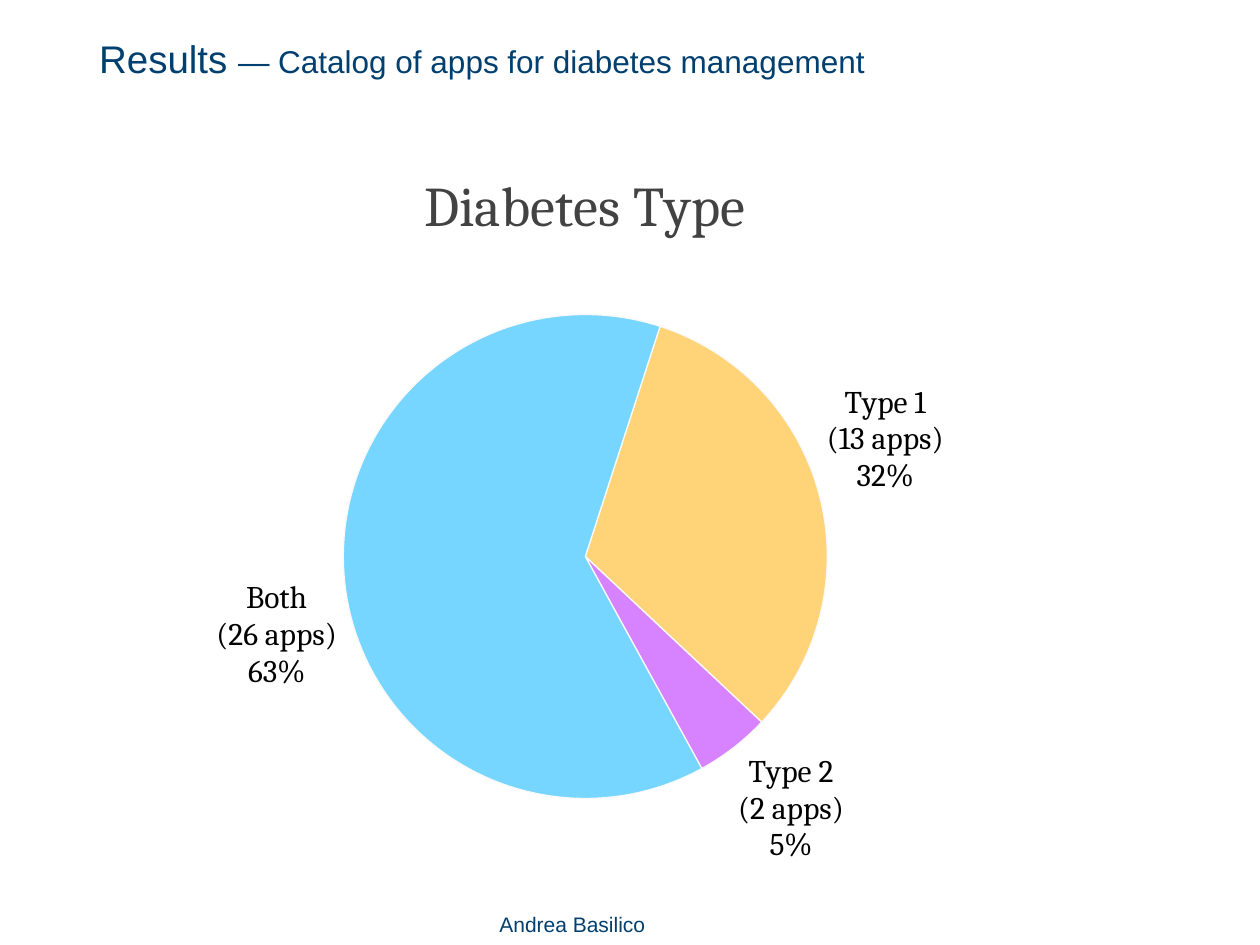
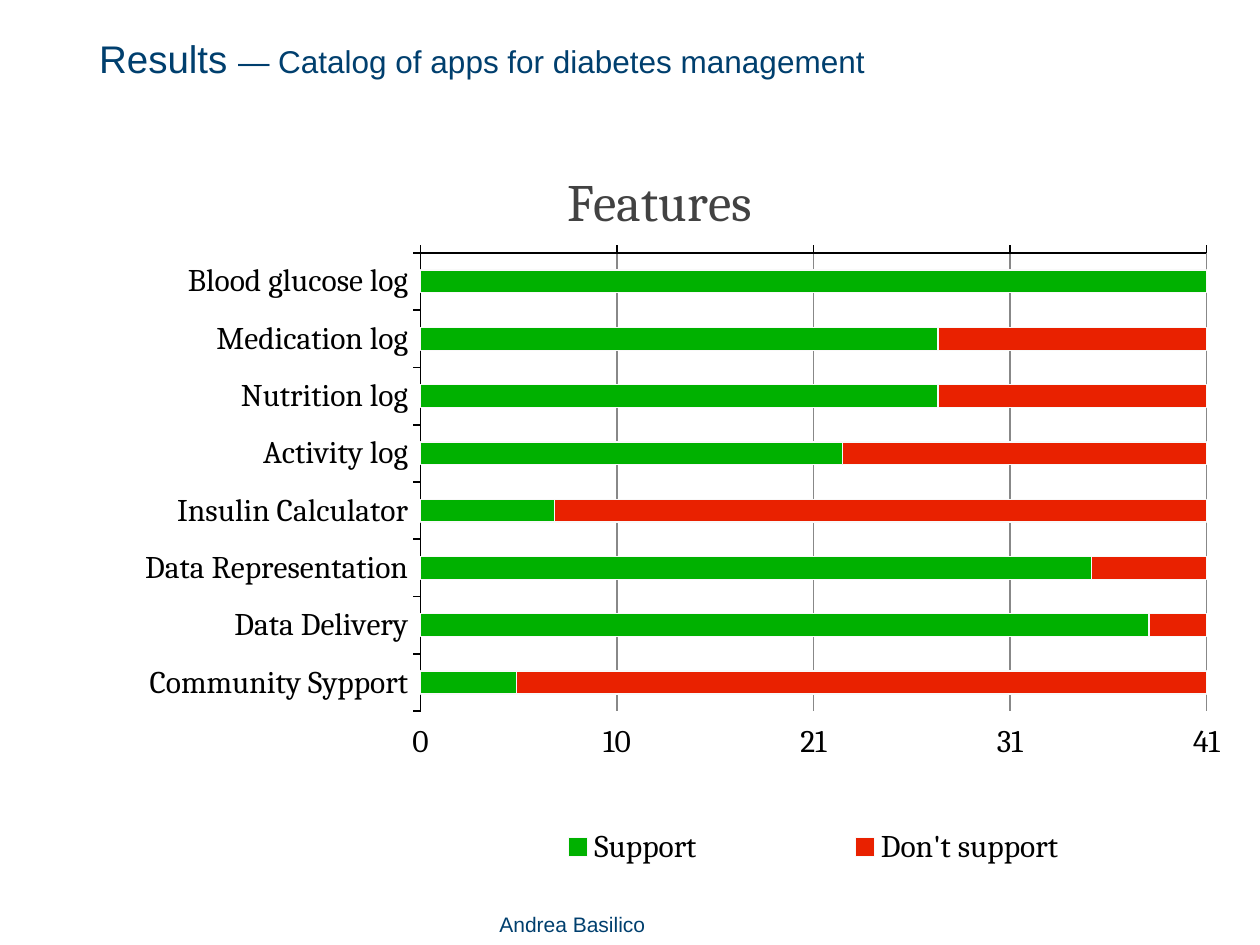
from lxml import etree
from pptx import Presentation
from pptx.chart.data import CategoryChartData
from pptx.dml.color import RGBColor
from pptx.enum.chart import (XL_CHART_TYPE, XL_LABEL_POSITION, XL_LEGEND_POSITION,
                             XL_TICK_LABEL_POSITION, XL_TICK_MARK)
from pptx.enum.text import MSO_ANCHOR, MSO_AUTO_SIZE, PP_ALIGN
from pptx.oxml.ns import qn
from pptx.util import Cm, Pt

PIE, BAR_STACKED = XL_CHART_TYPE.PIE, XL_CHART_TYPE.BAR_STACKED
OUTSIDE_END = XL_LABEL_POSITION.OUTSIDE_END
BOTTOM = XL_LEGEND_POSITION.BOTTOM
LABELS_HIGH = XL_TICK_LABEL_POSITION.HIGH
TICK_OUT, TICK_NONE = XL_TICK_MARK.OUTSIDE, XL_TICK_MARK.NONE
TITLE_ONLY = 5

COLORS = {
    "navy": "003F6E", "heading": "424242", "black": "000000",
    "edge": "F9F9F9", "grid": "888888",
    "type1": "FFD479", "type2": "D783FF", "both": "76D6FF",
    "support": "00B100", "no_support": "E92100",
}
SANS, SERIF = "Arial", "Cambria"

DIABETES_TYPES = [
    ("Type 1", "(13 apps)", 32, "type1"),
    ("Type 2", "(2 apps)", 5, "type2"),
    ("Both", "(26 apps)", 63, "both"),
]
APP_COUNT = 41
FEATURE_SUPPORT = {
    "Blood glucose log": 41, "Medication log": 27, "Nutrition log": 27,
    "Activity log": 22, "Insulin Calculator": 7, "Data Representation": 35,
    "Data Delivery": 38, "Community Sypport": 5,
}


def rgb(name):
    return RGBColor.from_string(COLORS[name])


def set_font(font, size, color="black", name=SERIF):
    font.size, font.name, font.bold = Pt(size), name, False
    font.color.rgb = rgb(color)


def set_line(line, color, width):
    line.color.rgb = rgb(color)
    line.width = Pt(width)


def set_layout(parent, index, box, inner=False):
    """Place a chart part by fractions (x, y, w, h) of the chart area."""
    for old in parent.findall(qn("c:layout")):
        parent.remove(old)
    layout = etree.Element(qn("c:layout"))
    parent.insert(index, layout)
    manual = etree.SubElement(layout, qn("c:manualLayout"))
    settings = [("layoutTarget", "inner")] if inner else []
    settings += [("xMode", "edge"), ("yMode", "edge"), *zip("xywh", box)]
    for tag, value in settings:
        etree.SubElement(manual, qn(f"c:{tag}")).set("val", str(value))


class Deck:
    """Shared style and the slide being filled."""

    def __init__(self):
        self.prs = Presentation()
        self.prs.slide_width, self.prs.slide_height = Cm(25.4), Cm(19.05)
        self.s = None

    def slide(self, subtitle):
        self.s = self.prs.slides.add_slide(self.prs.slide_layouts[TITLE_ONLY])
        self.title(subtitle)
        self.footer("Andrea Basilico")

    def text(self, sp, box, runs, align, inset):
        sp.left, sp.top, sp.width, sp.height = map(Cm, box)
        tf = sp.text_frame
        tf.word_wrap, tf.auto_size = True, MSO_AUTO_SIZE.NONE
        tf.vertical_anchor = MSO_ANCHOR.TOP
        tf.margin_left = tf.margin_right = tf.margin_top = tf.margin_bottom = Cm(inset)
        p = tf.paragraphs[0]
        p.alignment = align
        for text, size in runs:
            r = p.add_run()
            r.text = text
            set_font(r.font, size, "navy", SANS)

    def title(self, subtitle):
        self.text(self.s.shapes.title, (2, 0.71, 20.7, 2.34),
                  [("Results ", 22), (f"— {subtitle}", 18)], PP_ALIGN.LEFT, 0)

    def footer(self, author):
        box = (0.64, 18.24, 12.5, 0.74)
        sp = self.s.shapes.add_textbox(*map(Cm, box))
        self.text(sp, box, [(author, 12)], PP_ALIGN.RIGHT, 0.13)

    def chart(self, kind, box, title, title_size, categories, series, plot_box):
        data = CategoryChartData()
        data.categories = categories
        for name, values in series:
            data.add_series(name, values)
        chart = self.s.shapes.add_chart(kind, *map(Cm, box), data).chart
        set_font(chart.font, 10, name=SANS)
        chart.has_title, chart.has_legend = True, False
        r = chart.chart_title.text_frame.paragraphs[0].add_run()
        r.text = title
        set_font(r.font, title_size, "heading")
        chart.plots[0].vary_by_categories = False
        set_layout(chart._chartSpace.chart.plotArea, 0, plot_box, inner=True)
        return chart

    def pie(self, box, title, slices, start_angle, plot_box):
        chart = self.chart(PIE, box, title, 32,
                           [f"{name} {count}" for name, count, _, _ in slices],
                           [(title, [share for _, _, share, _ in slices])], plot_box)
        plot = chart.plots[0]
        angle = etree.SubElement(plot._element, qn("c:firstSliceAng"))
        angle.set("val", str(start_angle))
        for i, (name, count, share, color) in enumerate(slices):
            point = plot.series[0].points[i]
            point.format.fill.solid()
            point.format.fill.fore_color.rgb = rgb(color)
            set_line(point.format.line, "edge", 0.75)
            label = point.data_label
            tf = label.text_frame
            for n, text in enumerate((name, count, f"{share}%")):
                p = tf.add_paragraph() if n else tf.paragraphs[0]
                r = p.add_run()
                r.text = text
                set_font(r.font, 18)
            label.position = OUTSIDE_END

    def stacked_bars(self, box, title, categories, series, colors, maximum, plot_box):
        chart = self.chart(BAR_STACKED, box, title, 30, categories, series, plot_box)
        plot = chart.plots[0]
        plot.gap_width, plot.overlap = 150, 100
        for ser, color in zip(plot.series, colors):
            ser.invert_if_negative = False
            ser.format.fill.solid()
            ser.format.fill.fore_color.rgb = rgb(color)
            set_line(ser.format.line, "edge", 0.75)
        for axis in (chart.category_axis, chart.value_axis):
            axis.major_tick_mark, axis.minor_tick_mark = TICK_OUT, TICK_NONE
            set_font(axis.tick_labels.font, 18)
            set_line(axis.format.line, "black", 1)
        chart.category_axis.reverse_order = True
        axis = chart.value_axis
        axis.minimum_scale, axis.maximum_scale = 0, maximum
        axis.major_unit = maximum / 4
        axis.tick_label_position = LABELS_HIGH
        axis.tick_labels.number_format = "0"
        axis.tick_labels.number_format_is_linked = False
        axis.has_major_gridlines = True
        set_line(axis.major_gridlines.format.line, "grid", 1)
        chart.has_legend = True
        legend = chart.legend
        legend.position = BOTTOM
        set_font(legend.font, 18)
        x, _, width, _ = plot_box
        set_layout(legend._element, 1, (x, 0.92, width, 0.08))


def main():
    deck = Deck()
    subtitle = "Catalog of apps for diabetes management"

    deck.slide(subtitle)
    deck.pie((3.3, 2.72, 17, 17), "Diabetes Type", DIABETES_TYPES, 18,
             (0.213, 0.213, 0.574, 0.574))

    deck.slide(subtitle)
    supported = list(FEATURE_SUPPORT.values())
    deck.stacked_bars((1.88, 2.77, 22.83, 14.91), "Features", list(FEATURE_SUPPORT),
                      [("Support", supported),
                       ("Don't support", [APP_COUNT - n for n in supported])],
                      ("support", "no_support"), APP_COUNT,
                      (0.289, 0.156, 0.694, 0.62))

    deck.prs.save("out.pptx")


if __name__ == "__main__":
    main()
